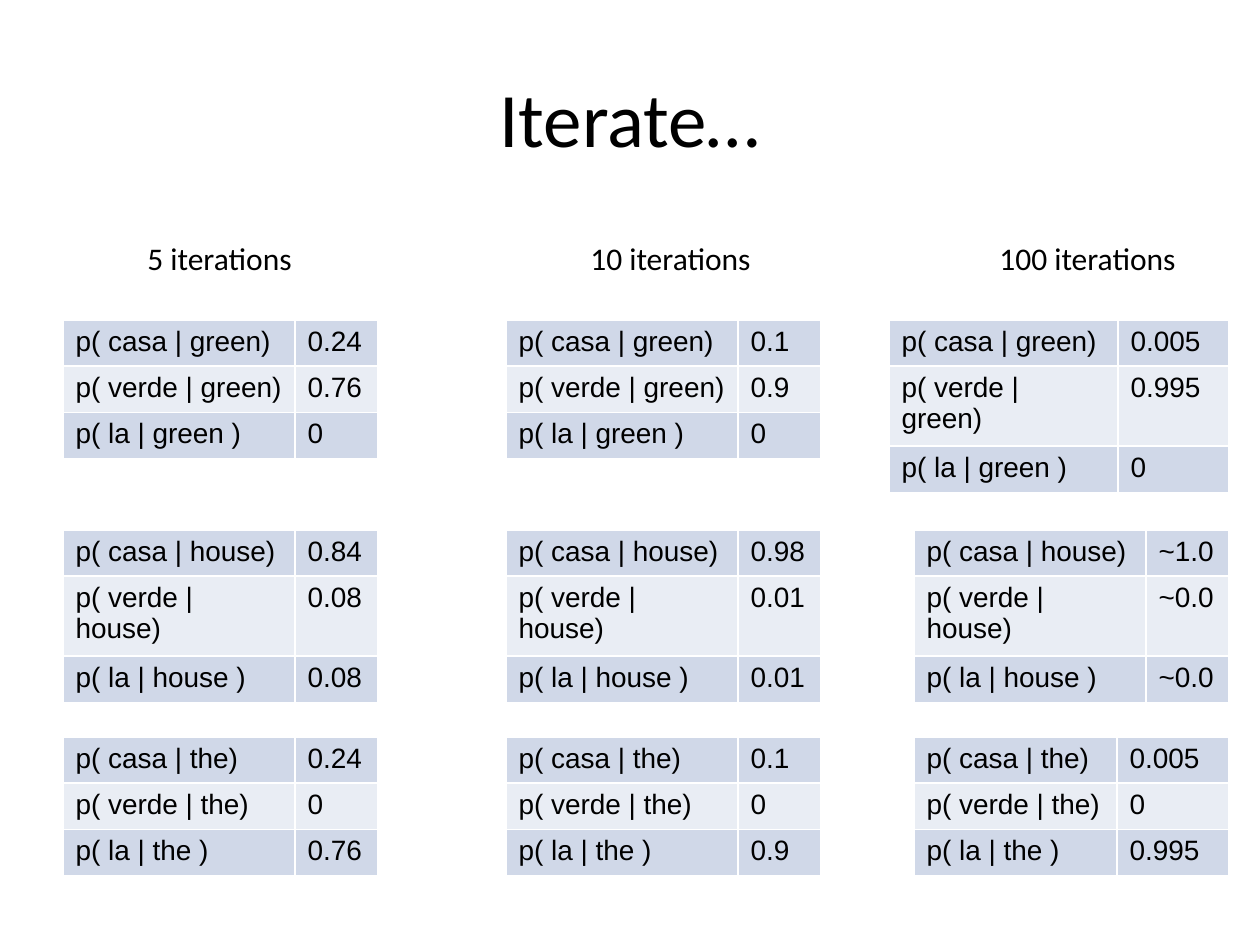
from lxml import etree
from pptx import Presentation
from pptx import util as u
from pptx.dml.color import RGBColor
from pptx.enum import text
from pptx.oxml.ns import qn

BLACK = RGBColor(0x00, 0x00, 0x00)
WHITE = RGBColor(0xFF, 0xFF, 0xFF)
DARK = RGBColor(0xD0, 0xD8, 0xE8)
LIGHT = RGBColor(0xE9, 0xED, 0xF4)

WORDS = ("casa | {})", "verde | {})", "la | {} )")
TOPS = {"green": 320, "house": 530, "the": 737}
ROW = 45
# heading, heading left and width, row heights (one line, two lines),
# then for each word: table left, column widths, values
RUNS = [
    ("5 iterations", 135, 173, (45, 75), {
        "green": (63, (232, 83), ("0.24", "0.76", "0")),
        "house": (63, (232, 83), ("0.84", "0.08", "0.08")),
        "the": (63, (232, 83), ("0.24", "0", "0.76"))}),
    ("10 iterations", 578, 189, (46, 80), {
        "green": (506, (232, 83), ("0.1", "0.9", "0")),
        "house": (506, (232, 83), ("0.98", "0.01", "0.01")),
        "the": (506, (232, 83), ("0.1", "0", "0.9"))}),
    ("100 iterations", 987, 205, (46, 80), {
        "green": (889, (229, 111), ("0.005", "0.995", "0")),
        "house": (914, (232, 83), ("~1.0", "~0.0", "~0.0")),
        "the": (914, (203, 112), ("0.005", "0", "0.995"))}),
]


def px(n):
    return u.Emu(round(n * 914400 / 126))


class Deck:
    def __init__(self):
        self.prs = Presentation()
        self.prs.slide_width, self.prs.slide_height = px(1260), px(945)
        self.slide = self.prs.slides.add_slide(self.prs.slide_layouts[6])

    def style(self, par, size, face, align):
        par.alignment = align
        par.font.size = u.Pt(size)
        par.font.name = face
        par.font.color.rgb = BLACK

    def label(self, words, box, size, align=text.PP_ALIGN.LEFT, wrap=False):
        frame = self.slide.shapes.add_textbox(*map(px, box)).text_frame
        frame.word_wrap = wrap
        frame.vertical_anchor = text.MSO_ANCHOR.MIDDLE
        frame.text = words
        self.style(frame.paragraphs[0], size, "Calibri", align)

    def edge(self, cell):
        """Draw a thin white line on each side of the cell."""
        props = cell._tc.get_or_add_tcPr()
        for side in ("lnL", "lnR", "lnT", "lnB"):
            line = etree.SubElement(props, qn("a:" + side), w=str(u.Pt(1)))
            fill = etree.SubElement(line, qn("a:solidFill"))
            etree.SubElement(fill, qn("a:srgbClr"), val=str(WHITE))

    def table(self, left, top, widths, heights, rows):
        box = map(px, (left, top, sum(widths), sum(heights)))
        table = self.slide.shapes.add_table(len(rows), len(widths), *box).table
        table.first_row = table.horz_banding = False
        for col, width in zip(table.columns, widths):
            col.width = px(width)
        for i, (row, height) in enumerate(zip(table.rows, heights)):
            row.height = px(height)
            for cell, words in zip(row.cells, rows[i]):
                cell.text = words
                self.style(cell.text_frame.paragraphs[0], 16, "Arial",
                           text.PP_ALIGN.LEFT)
                self.edge(cell)
                cell.fill.solid()
                cell.fill.fore_color.rgb = LIGHT if i % 2 else DARK


def main():
    deck = Deck()
    deck.label("Iterate…", (63, 38, 1134, 158), 44, text.PP_ALIGN.CENTER, True)
    for head, left, width, (one, two), tables in RUNS:
        deck.label(head, (left, 233, width, 50), 18)
        for word, (x, widths, values) in tables.items():
            wraps = word == "house" or (word == "green" and widths[0] < 232)
            heights = (one, two if wraps else one, ROW)
            names = ["p( " + w.format(word) for w in WORDS]
            deck.table(x, TOPS[word], widths, heights, list(zip(names, values)))
    deck.prs.save("out.pptx")


if __name__ == "__main__":
    main()
